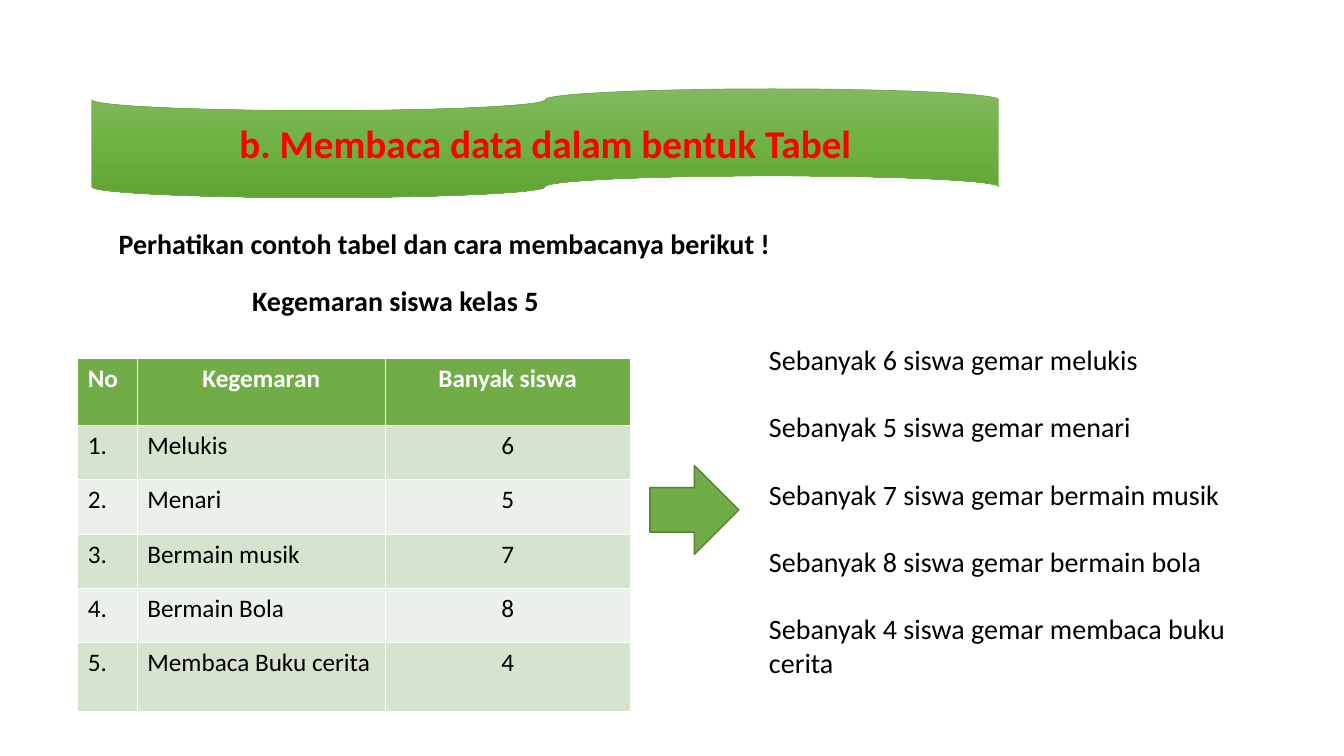
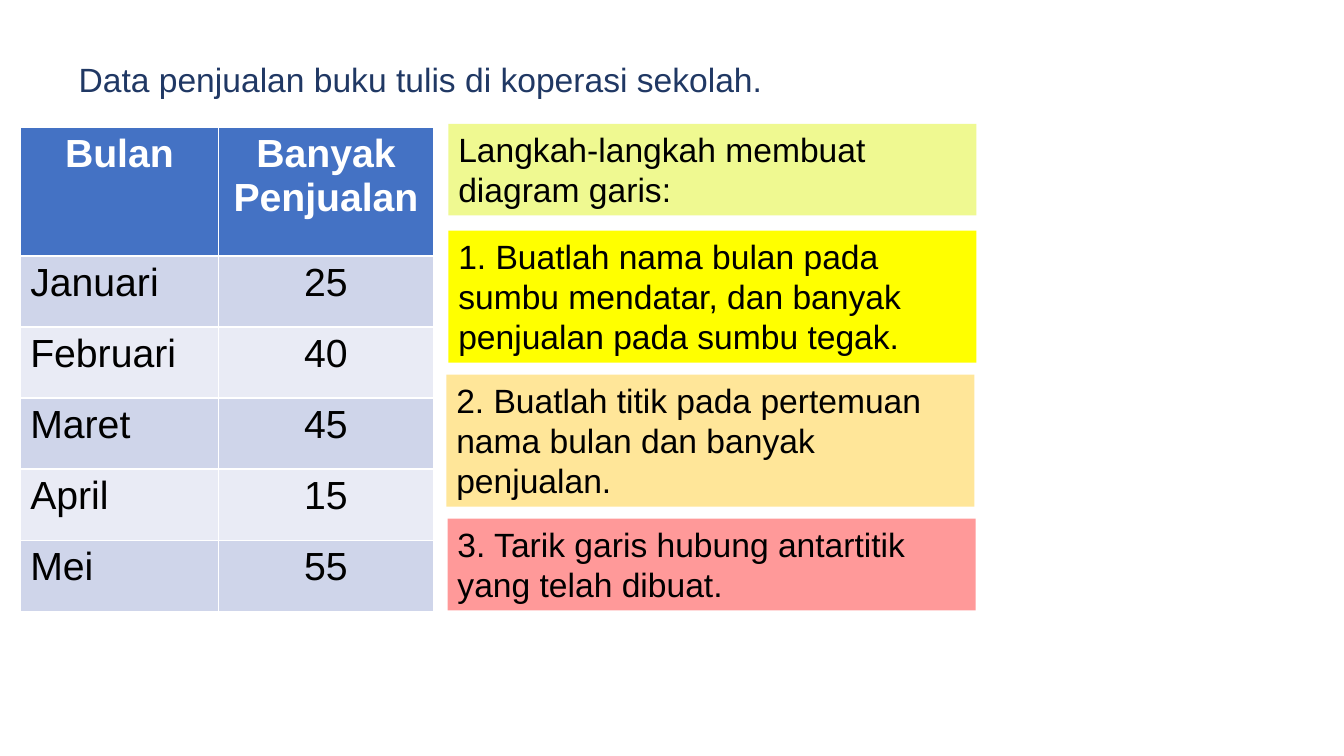
from copy import deepcopy
from dataclasses import dataclass
from typing import NamedTuple

from pptx import Presentation
from pptx.dml.color import RGBColor as Rgb
from pptx.enum.shapes import MSO_SHAPE as Shape
from pptx.enum.text import MSO_ANCHOR as Anchor, PP_ALIGN as Align
from pptx.oxml.ns import qn
from pptx.util import Cm, Pt


class Box(NamedTuple):
    left: float
    top: float
    width: float
    height: float

    def lengths(self):
        return [Cm(value) for value in self]


@dataclass(frozen=True)
class Theme:
    black: str = "000000"
    white: str = "FFFFFF"
    red: str = "FF0000"
    navy: str = "203864"
    green: str = "70AD47"
    dark_green: str = "538035"
    tape: tuple = ("81B861", "6FB242", "62A336")
    green_table: tuple = ("70AD47", "D5E3CF", "EBF1E9")
    blue_table: tuple = ("4472C4", "CFD5EA", "E9EBF5")
    lime: str = "EFF991"
    yellow: str = "FFFF00"
    cream: str = "FFE699"
    pink: str = "FF9999"
    banner: int = 28
    text: int = 20
    table: int = 18
    step: int = 24
    large_table: int = 28
    plain_font: str = "Calibri"
    school_font: str = "Arial"


THEME = Theme()


def font_format(name, size, bold=False):
    return {"name": name, "size": Pt(size), "bold": bold}


def write(frame, lines, font, color=THEME.black, align=Align.LEFT, gap=0):
    frame.word_wrap = True
    for index, line in enumerate(lines):
        para = frame.add_paragraph() if index else frame.paragraphs[0]
        para.alignment = align
        para.space_before = Pt(gap if index else 0)
        span = para.add_run()
        span.text = line
        for name, value in font.items():
            setattr(span.font, name, value)
        span.font.color.rgb = Rgb.from_string(color)


def add_text(page, box, lines, font, **options):
    area = page.shapes.add_textbox(*box.lengths())
    write(area.text_frame, lines, font, **options)


def add_panel(page, kind, box, fill=None, line=None, weight=1):
    panel = page.shapes.add_shape(kind, *box.lengths())
    panel.shadow.inherit = False
    if fill:
        panel.fill.solid()
        panel.fill.fore_color.rgb = Rgb.from_string(fill)
    if line:
        panel.line.color.rgb = Rgb.from_string(line)
        panel.line.width = Pt(weight)
    else:
        panel.line.fill.background()
    return panel


def add_banner(page, box, title):
    tape = add_panel(page, Shape.FLOWCHART_PUNCHED_TAPE, box, line=THEME.green, weight=0.5)
    tape.fill.gradient()
    tape.fill.gradient_angle = 270
    stops = tape.element.spPr.find(".//" + qn("a:gsLst"))
    stops.append(deepcopy(stops[0]))
    for index, (stop, color) in enumerate(zip(tape.fill.gradient_stops, THEME.tape)):
        stop.position = index / 2
        stop.color.rgb = Rgb.from_string(color)
    tape.text_frame.vertical_anchor = Anchor.MIDDLE
    write(tape.text_frame, [title], font_format(THEME.plain_font, THEME.banner, True),
          color=THEME.red, align=Align.CENTER)


def add_data_table(page, left, top, widths, heights, rows, aligns, fills, name, size):
    box = Box(left, top, sum(widths), sum(heights))
    table = page.shapes.add_table(len(rows), len(widths), *box.lengths()).table
    for column, width in zip(table.columns, widths):
        column.width = Cm(width)
    for row, height in zip(table.rows, heights):
        row.height = Cm(height)
    for row_index, values in enumerate(rows):
        header = row_index == 0
        fill = fills[0] if header else fills[2 - row_index % 2]
        for column_index, value in enumerate(values):
            cell = table.cell(row_index, column_index)
            cell.fill.solid()
            cell.fill.fore_color.rgb = Rgb.from_string(fill)
            write(cell.text_frame, [value], font_format(name, size, header),
                  color=THEME.white if header else THEME.black,
                  align=aligns[header][column_index])


def add_steps(page, box, steps):
    top = box.top
    font = font_format(THEME.school_font, THEME.step)
    for inset, gap, height, fill, text in steps:
        top += gap
        card = add_panel(page, Shape.RECTANGLE, Box(box.left + inset, top, box.width, height), fill)
        card.text_frame.vertical_anchor = Anchor.TOP
        write(card.text_frame, [text], font)
        top += height


def build_table_reading(page):
    strong = font_format(THEME.plain_font, THEME.text, True)
    add_banner(page, Box(2.31, 2.24, 22.86, 2.74), "b. Membaca data dalam bentuk Tabel")
    add_text(page, Box(2.74, 5.59, 19.25, 1.12),
             ["Perhatikan contoh tabel dan cara membacanya berikut !"], strong)
    add_text(page, Box(2.74, 7.01, 14.45, 1.12), ["Kegemaran siswa kelas 5"], strong,
             align=Align.CENTER)
    hobbies = [("Melukis", 6), ("Menari", 5), ("Bermain musik", 7),
               ("Bermain Bola", 8), ("Membaca Buku cerita", 4)]
    rows = [("No", "Kegemaran", "Banyak siswa")]
    rows += [(f"{number}.", hobby, str(count))
             for number, (hobby, count) in enumerate(hobbies, 1)]
    aligns = ((Align.LEFT, Align.LEFT, Align.CENTER), (Align.LEFT, Align.CENTER, Align.CENTER))
    add_data_table(page, 1.96, 9.04, (1.5, 6.25, 6.17), (1.68, *[1.37] * 4, 1.73), rows,
                   aligns, THEME.green_table, THEME.plain_font, THEME.table)
    add_panel(page, Shape.RIGHT_ARROW, Box(16.38, 11.73, 2.24, 2.24),
              THEME.green, THEME.dark_green)
    readings = [f"Sebanyak {count} siswa gemar {hobby.lower()}" for hobby, count in hobbies]
    add_text(page, Box(19.13, 8.51, 13.08, 8.81), readings,
             font_format(THEME.plain_font, THEME.text), gap=24)


def build_line_chart_steps(page):
    heading = add_panel(page, Shape.RECTANGLE, Box(1.3, 1.35, 18.59, 1.27), THEME.white)
    heading.text_frame.vertical_anchor = Anchor.TOP
    write(heading.text_frame, ["Data penjualan buku tulis di koperasi sekolah."],
          font_format(THEME.school_font, THEME.step), color=THEME.navy, align=Align.CENTER)
    rows = [("Bulan", "Banyak Penjualan"), ("Januari", "25"), ("Februari", "40"),
            ("Maret", "45"), ("April", "15"), ("Mei", "55")]
    aligns = ((Align.LEFT, Align.CENTER), (Align.CENTER, Align.CENTER))
    add_data_table(page, 0.51, 3.2, (5, 5.41), (3.25, *[1.79] * 5), rows,
                   aligns, THEME.blue_table, THEME.school_font, THEME.large_table)
    add_steps(page, Box(11.25, 3.12, 13.31, 12.27), [
        (0.05, 0, 2.31, THEME.lime, "Langkah-langkah membuat diagram garis:"),
        (0.05, 0.38, 3.33, THEME.yellow,
         "1. Buatlah nama bulan pada sumbu mendatar, dan banyak penjualan pada sumbu tegak."),
        (0, 0.3, 3.33, THEME.cream,
         "2. Buatlah titik pada pertemuan nama bulan dan banyak penjualan."),
        (0.03, 0.3, 2.31, THEME.pink, "3. Tarik garis hubung antartitik yang telah dibuat."),
    ])


def main():
    deck = Presentation()
    deck.slide_width, deck.slide_height = Cm(33.87), Cm(19.05)
    for build in (build_table_reading, build_line_chart_steps):
        build(deck.slides.add_slide(deck.slide_layouts[6]))
    deck.save("out.pptx")


if __name__ == "__main__":
    main()
